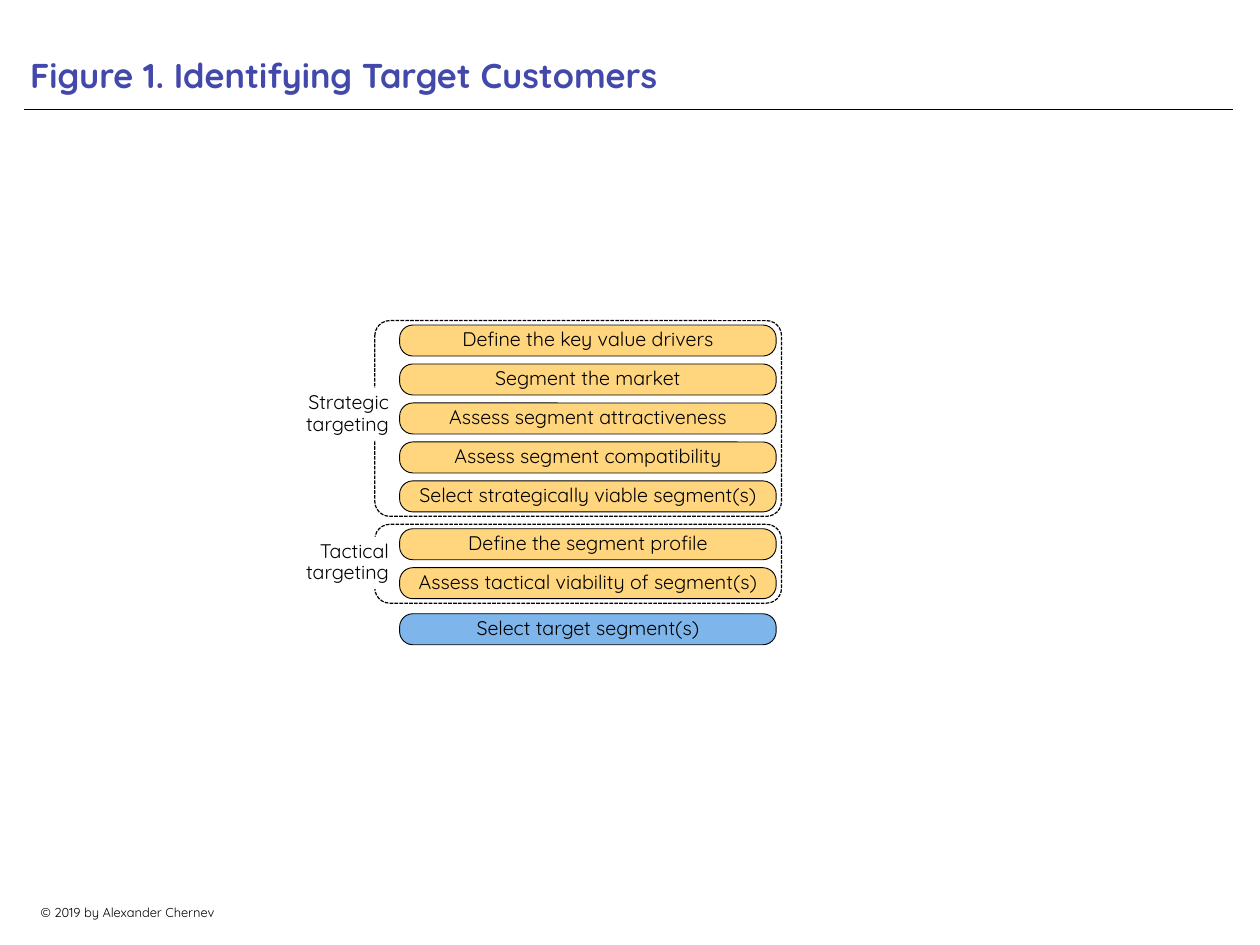
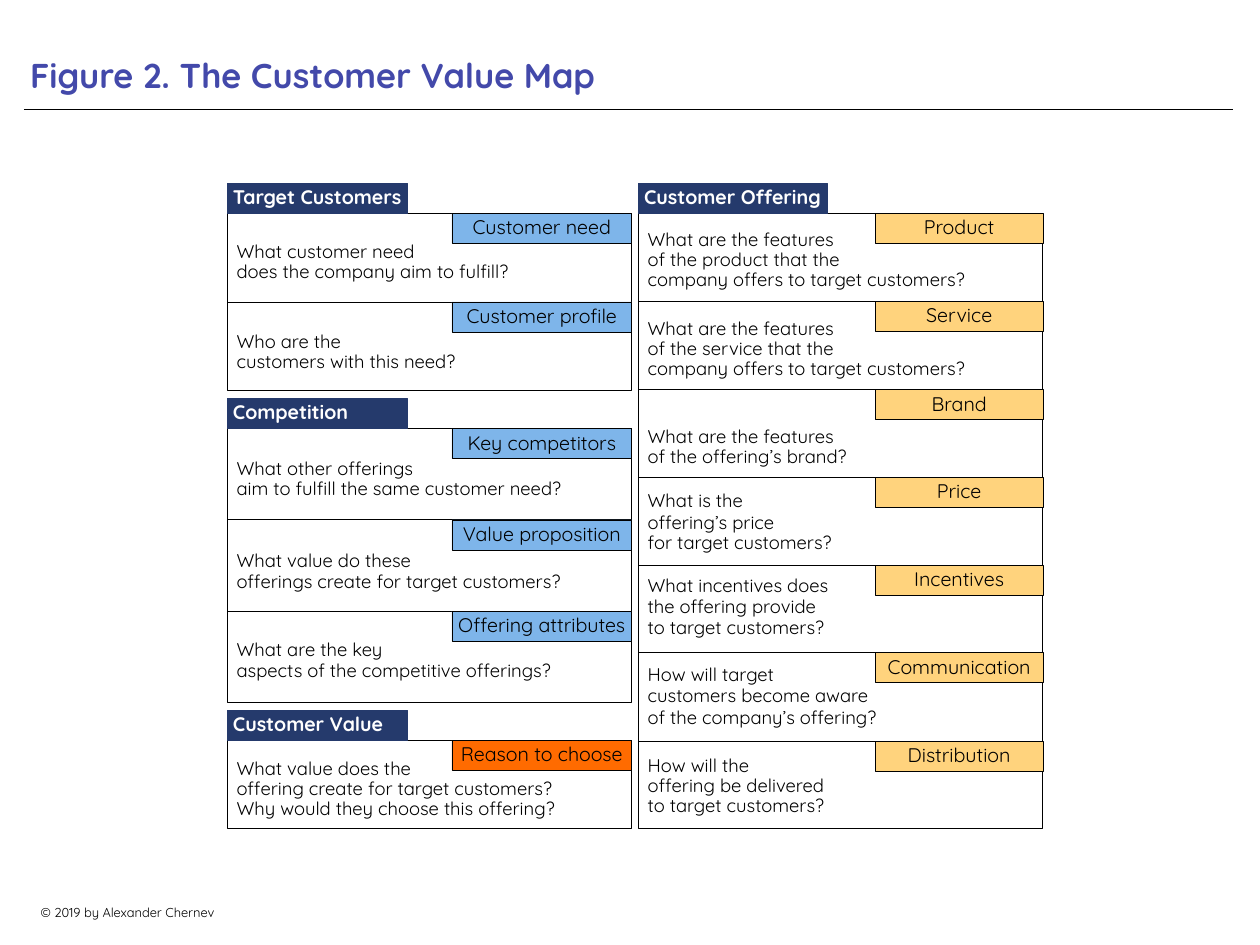
from copy import deepcopy

from pptx import Presentation
from pptx.dml.color import RGBColor
from pptx.enum.dml import MSO_LINE
from pptx.enum.shapes import MSO_CONNECTOR, MSO_SHAPE
from pptx.enum.text import MSO_ANCHOR as ANCHOR, PP_ALIGN as ALIGN
from pptx.oxml.ns import qn
from pptx.util import Pt
from lxml.etree import SubElement

# Shared measures and colours: 100 px to the inch
EMU_PER_PX = 9144
SLIDE_W, SLIDE_H = 1422, 1067
FONT = "Quicksand"
BLACK, WHITE = "000000", "FFFFFF"
TITLE, NAVY = "4349AA", "253A6C"
SAND, GOLD, SKY, ORANGE = "FFD67E", "FFD37D", "7EB5EA", "FF6B00"
COPYRIGHT = "© 2019 by Alexander Chernev"

# Targeting steps
STEP_X, STEP_W, STEP_H, STEP_PITCH, STEP_RADIUS = 451, 425, 35, 44, 15
FRAME_X, FRAME_W, FRAME_PAD, FRAME_RADIUS = 423, 459, 5, 17
LABEL_X, LABEL_W, LABEL_H = 335, 104, 59
STAGES = [
    ("Strategic targeting", 367, 438, [
        "Define the key value drivers", "Segment the market",
        "Assess segment attractiveness", "Assess segment compatibility",
        "Select strategically viable segment(s)"]),
    ("Tactical targeting", 597, 606, [
        "Define the segment profile",
        "Assess tactical viability of segment(s)"]),
]

# Value map panels; each row is a tab, its question and the question's centre
# below the row's top (\n starts a paragraph, \v breaks a line)
BAR_H, PANEL_W, QUESTION_H, QUESTION_INDENT = 34, 456, 80, 10
LEFT_COLUMN = dict(left=257, bar_w=203, tab_w=203)
RIGHT_COLUMN = dict(left=721, bar_w=213, tab_w=189)
PANELS = [
    dict(RIGHT_COLUMN, heading="Customer Offering", top=207, height=695,
         tab_fill=GOLD, rows=[
        ("Product", "What are the features\vof the product that the\v"
                    "company offers to target customers?", 53),
        ("Service", "What are the features\vof the service that the\v"
                    "company offers to target customers?", 55),
        ("Brand", "What are the features\vof the offering’s brand?", 65),
        ("Price", "What is the\noffering’s price\vfor target customers?", 51),
        ("Incentives", "What incentives does\nthe offering provide\n"
                       "to target customers?", 48),
        ("Communication", "How will target\ncustomers become aware\n"
                          "of the company’s offering?", 50),
        ("Distribution", "How will the\voffering be delivered\v"
                         "to target customers?", 51)]),
    dict(LEFT_COLUMN, heading="Customer Value", top=802, height=100,
         tab_fill=ORANGE, rows=[
        ("Reason to choose", "What value does the\v"
                             "offering create for target customers?\v"
                             "Why would they choose this offering?", 56)]),
    dict(LEFT_COLUMN, heading="Target Customers", top=207, height=200,
         tab_fill=SKY, rows=[
        ("Customer need", "What customer need\v"
                          "does the company aim to fulfill?", 55),
        ("Customer profile", "Who are the\vcustomers with this need?", 57)]),
    dict(LEFT_COLUMN, heading="Competition", top=450, height=309,
         tab_fill=SKY, rows=[
        ("Key competitors", "What other offerings\v"
                            "aim to fulfill the same customer need?", 58),
        ("Value proposition", "What value do these\n"
                              "offerings create for target customers?", 59),
        ("Offering attributes", "What are the key\n"
                                "aspects of the competitive offerings?", 56)]),
]


def px(*lengths):
    return [round(length * EMU_PER_PX) for length in lengths]


def color(hex_code):
    return RGBColor.from_string(hex_code)


def set_all(target, **values):
    for name, value in values.items():
        setattr(target, name, value)


def write(shape, text, size=16, ink=BLACK, bold=False, align=ALIGN.CENTER,
          anchor=ANCHOR.MIDDLE, insets=(0, 0, 0, 0), spacing=0.9, before=0,
          wrap=True):
    """Fill a shape with text; insets run left, top, right, bottom."""
    frame = shape.text_frame
    sides = ("margin_left", "margin_top", "margin_right", "margin_bottom")
    set_all(frame, word_wrap=wrap, vertical_anchor=anchor,
            **dict(zip(sides, px(*insets))))
    frame.text = text
    for index, paragraph in enumerate(frame.paragraphs):
        set_all(paragraph, alignment=align, line_spacing=spacing,
                space_before=Pt(before if index else 0))
        for run in paragraph.runs:
            set_all(run.font, name=FONT, size=Pt(size), bold=bold)
            run.font.color.rgb = color(ink)
        # Line breaks take the size of the text around them
        for line_break in paragraph._p.findall(qn("a:br")):
            line_break.insert(0, deepcopy(paragraph.runs[0]._r.rPr))


def add_text(slide, box, text, **style):
    write(slide.shapes.add_textbox(*px(*box)), text, **style)


def add_box(slide, box, fill=None, line=None, weight=0.75, radius=0,
            dash=None):
    kind = MSO_SHAPE.ROUNDED_RECTANGLE if radius else MSO_SHAPE.RECTANGLE
    shape = slide.shapes.add_shape(kind, *px(*box))
    shape.shadow.inherit = False
    if radius:
        shape.adjustments[0] = radius / min(box[2:])
    if fill:
        shape.fill.solid()
        shape.fill.fore_color.rgb = color(fill)
    else:
        shape.fill.background()
    if line:
        shape.line.color.rgb = color(line)
        set_all(shape.line, width=Pt(weight), dash_style=dash)
    else:
        shape.line.fill.background()
    return shape


def add_rule(slide, left, right, y, weight=0.75):
    rule = slide.shapes.add_connector(MSO_CONNECTOR.STRAIGHT,
                                      *px(left, y, right, y))
    rule.line.color.rgb = color(BLACK)
    rule.line.width = Pt(weight)
    SubElement(rule._element.spPr, qn("a:effectLst"))
    return rule


def add_titled_slide(deck, title):
    slide = deck.slides.add_slide(deck.slide_layouts[6])
    add_text(slide, (27, 1016, 234, 28), COPYRIGHT, size=10.5,
             anchor=ANCHOR.TOP, insets=(10, 5, 10, 5), spacing=1, wrap=False)
    add_rule(slide, 27, 1392, 124, weight=0.5)
    add_text(slide, (27, 0, 1364, 115), title, size=28, ink=TITLE, bold=True,
             align=ALIGN.LEFT, anchor=ANCHOR.BOTTOM, insets=(7, 7, 7, 7),
             spacing=1)
    return slide


def add_step(slide, top, text, fill=SAND):
    step = add_box(slide, (STEP_X, top, STEP_W, STEP_H), fill, BLACK,
                   radius=STEP_RADIUS)
    write(step, text)


def add_stage(slide, name, top, label_top, steps):
    for index, step in enumerate(steps):
        add_step(slide, top + index * STEP_PITCH, step)
    height = (len(steps) - 1) * STEP_PITCH + STEP_H + 2 * FRAME_PAD
    add_box(slide, (FRAME_X, top - FRAME_PAD, FRAME_W, height), line=BLACK,
            weight=1, radius=FRAME_RADIUS, dash=MSO_LINE.SQUARE_DOT)
    label = add_box(slide, (LABEL_X, label_top, LABEL_W, LABEL_H), WHITE)
    write(label, name, align=ALIGN.RIGHT)


def add_panel(slide, heading, left, top, height, bar_w, tab_w, tab_fill, rows):
    body_top, right = top + BAR_H, left + PANEL_W
    body = add_box(slide, (left, body_top, PANEL_W, height), line=BLACK)
    bar = add_box(slide, (left, top, bar_w, BAR_H), NAVY, NAVY, weight=1)
    write(bar, heading, ink=WHITE, bold=True, align=ALIGN.LEFT,
          insets=(6, 0, 0, 0))
    for index, (topic, question, centre) in enumerate(rows):
        row_top = body_top + round(index * height / len(rows))
        if index:
            divider = add_rule(slide, left, right, row_top)
            if 2 * index == len(rows):
                divider.begin_connect(body, 1)
                divider.end_connect(body, 3)
        add_text(slide, (left + QUESTION_INDENT,
                         row_top + centre - QUESTION_H // 2,
                         PANEL_W - 2 * QUESTION_INDENT, QUESTION_H),
                 question, size=15, align=ALIGN.LEFT, before=1)
        tab = add_box(slide, (right - tab_w, row_top, tab_w, BAR_H),
                      tab_fill, BLACK, weight=0.5)
        write(tab, topic)


def main():
    deck = Presentation()
    deck.slide_width, deck.slide_height = px(SLIDE_W, SLIDE_H)

    # Targeting steps
    targeting = add_titled_slide(deck, "Figure 1. Identifying Target Customers")
    for stage in STAGES:
        add_stage(targeting, *stage)
    add_step(targeting, 693, "Select target segment(s)", SKY)

    # Value map
    value_map = add_titled_slide(deck, "Figure 2. The Customer Value Map")
    for panel in PANELS:
        add_panel(value_map, **panel)

    deck.save("out.pptx")


if __name__ == "__main__":
    main()
